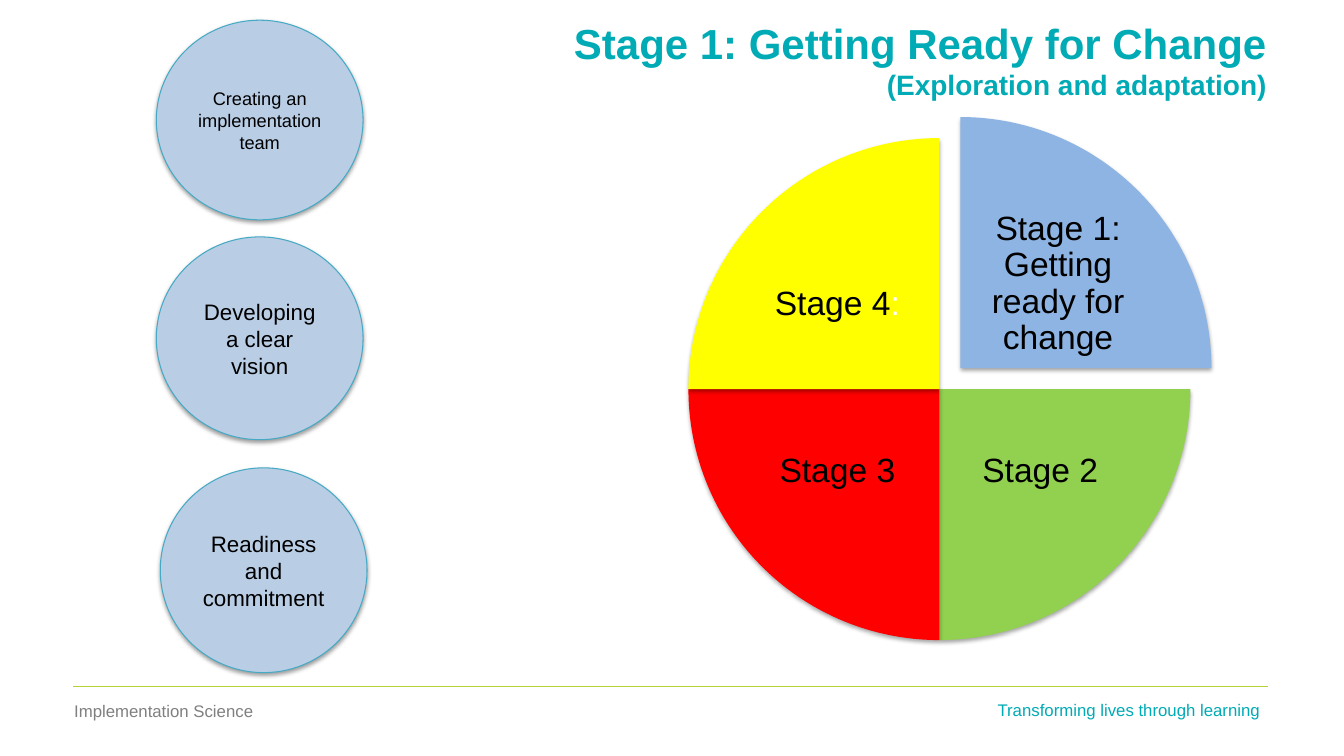
import lxml.etree
import pptx
import pptx.dml.color
import pptx.enum.shapes
import pptx.enum.text
import pptx.oxml.ns
import pptx.util

Cm = pptx.util.Cm
Pt = pptx.util.Pt
RGBColor = pptx.dml.color.RGBColor
SHAPE = pptx.enum.shapes.MSO_SHAPE
ALIGN = pptx.enum.text.PP_ALIGN
MIDDLE = pptx.enum.text.MSO_ANCHOR.MIDDLE

TEAL = RGBColor(0x00, 0xAB, 0xB5)
LIME = RGBColor(0xB3, 0xD2, 0x36)
GREY = RGBColor(0x80, 0x80, 0x80)
BLACK = RGBColor(0x00, 0x00, 0x00)
WHITE = RGBColor(0xFF, 0xFF, 0xFF)
PALE_BLUE = RGBColor(0xB9, 0xCD, 0xE5)
RIM_BLUE = RGBColor(0x46, 0xAA, 0xC5)
STAGE_BLUE = RGBColor(0x8E, 0xB4, 0xE3)
STAGE_GREEN = RGBColor(0x92, 0xD0, 0x50)
STAGE_RED = RGBColor(0xFF, 0x00, 0x00)
STAGE_YELLOW = RGBColor(0xFF, 0xFF, 0x00)

FONT = "Arial"
QUARTER_TURN = 54  # pie adjustments count 0.6 per degree

# label, fill, start in quarter turns, pull-out (cm), label left and top within the wheel (cm)
STAGES = [
    ("Stage 1: Getting ready for change", STAGE_BLUE, 3, 0.53, 6.98, 1.8),
    ("Stage 2", STAGE_GREEN, 0, 0, 6.53, 6.53),
    ("Stage 3", STAGE_RED, 1, 0, 1.42, 6.53),
    ("Stage 4:", STAGE_YELLOW, 2, 0, 1.42, 2.31),
]

# text, size, left, top and height within the column (cm)
STEPS = [
    ("Creating an implementation team", 13, 0, 0, 5.03),
    ("Developing a clear vision", 16, 0, 5.46, 5.11),
    ("Readiness and commitment", 16, 0.1, 11.28, 5.16),
]


def format_span(span, size, color, bold=False):
    span.font.name = FONT
    span.font.size = Pt(size)
    span.font.color.rgb = color
    span.font.bold = bold


def add_text(shapes, box, text, size, color, align=ALIGN.LEFT):
    """Add a wrapping one-paragraph text box; box is left, top, width, height in cm."""
    holder = shapes.add_textbox(*map(Cm, box))
    frame = holder.text_frame
    frame.word_wrap = True
    frame.text = text
    para = frame.paragraphs[0]
    para.alignment = align
    for span in para.runs:
        format_span(span, size, color)
    return holder


def add_shadow(target, opacity, distance):
    """Put a soft black shadow straight below a shape or connector."""
    target.shadow.inherit = False
    effects = target.element.spPr.find(pptx.oxml.ns.qn("a:effectLst"))
    shadow = lxml.etree.SubElement(
        effects, pptx.oxml.ns.qn("a:outerShdw"), blurRad=str(Pt(3.1)),
        dist=str(Pt(distance)), dir="5400000", rotWithShape="0")
    color = lxml.etree.SubElement(shadow, pptx.oxml.ns.qn("a:srgbClr"), val=str(BLACK))
    lxml.etree.SubElement(color, pptx.oxml.ns.qn("a:alpha"), val=str(opacity * 1000))


def add_footer(page, left, top, width):
    rule = page.shapes.add_connector(
        pptx.enum.shapes.MSO_CONNECTOR.STRAIGHT,
        Cm(left), Cm(top), Cm(left + width), Cm(top))
    rule.line.color.rgb = LIME
    rule.line.width = Pt(0.75)
    lxml.etree.SubElement(rule.element.spPr, pptx.oxml.ns.qn("a:effectLst"))
    add_text(page.shapes, (left - 0.23, top + 0.23, 7.65, 0.76),
             "Implementation Science", 12, GREY)
    add_text(page.shapes, (left + 23.04, top + 0.2, 7.65, 0.76),
             "Transforming lives through learning", 12, TEAL)


def add_wheel(page, left, top, size):
    wheel = page.shapes.add_group_shape()
    for label, fill, quarter, pull, label_left, label_top in STAGES:
        wedge = wheel.shapes.add_shape(
            SHAPE.PIE, Cm(left + pull), Cm(top - pull), Cm(size), Cm(size))
        wedge.adjustments[0] = quarter * QUARTER_TURN
        wedge.adjustments[1] = (quarter + 1) % 4 * QUARTER_TURN
        wedge.fill.solid()
        wedge.fill.fore_color.rgb = fill
        wedge.line.fill.background()
        add_shadow(wedge, 35, 1.8)

        box = (left + label_left, top + label_top, 4.67, 3.76)
        holder = add_text(wheel.shapes, box, label, 24, BLACK, ALIGN.CENTER)
        frame = holder.text_frame
        frame.vertical_anchor = MIDDLE
        frame.margin_left = frame.margin_right = Cm(0.08)
        frame.margin_top = frame.margin_bottom = Cm(0.08)
        para = frame.paragraphs[0]
        para.line_spacing = 0.9
        if label.endswith(":"):
            para.runs[0].text = label[:-1]
            colon = para.add_run()
            colon.text = ":"
            format_span(colon, 24, WHITE)


def add_steps(page, left, top, width):
    for text, size, step_left, step_top, height in STEPS:
        circle = page.shapes.add_shape(
            SHAPE.OVAL, Cm(left + step_left), Cm(top + step_top), Cm(width), Cm(height))
        circle.fill.solid()
        circle.fill.fore_color.rgb = PALE_BLUE
        circle.line.color.rgb = RIM_BLUE
        circle.line.width = Pt(0.75)
        add_shadow(circle, 38, 1.6)
        frame = circle.text_frame
        frame.word_wrap = True
        frame.vertical_anchor = MIDDLE
        frame.text = text
        para = frame.paragraphs[0]
        para.alignment = ALIGN.CENTER
        format_span(para.runs[0], size, BLACK)


def add_title(page, left, top, width, height):
    holder = add_text(
        page.shapes, (left, top, width, height),
        "Stage 1: Getting Ready for Change\v(Exploration and adaptation)",
        30, TEAL, ALIGN.RIGHT)
    holder.text_frame.vertical_anchor = MIDDLE
    heading, subtitle = holder.text_frame.paragraphs[0].runs
    format_span(heading, 30, TEAL, bold=True)
    format_span(subtitle, 20, TEAL, bold=True)


def main():
    deck = pptx.Presentation()
    deck.slide_width = Cm(33.87)
    deck.slide_height = Cm(19.05)
    page = deck.slides.add_slide(deck.slide_layouts[6])
    add_footer(page, 1.85, 17.3, 30.1)
    add_wheel(page, 17.35, 3.48, 12.65)
    add_steps(page, 3.94, 0.51, 5.21)
    add_title(page, 2.08, 0.51, 30.1, 1.98)
    deck.save("out.pptx")


if __name__ == "__main__":
    main()
